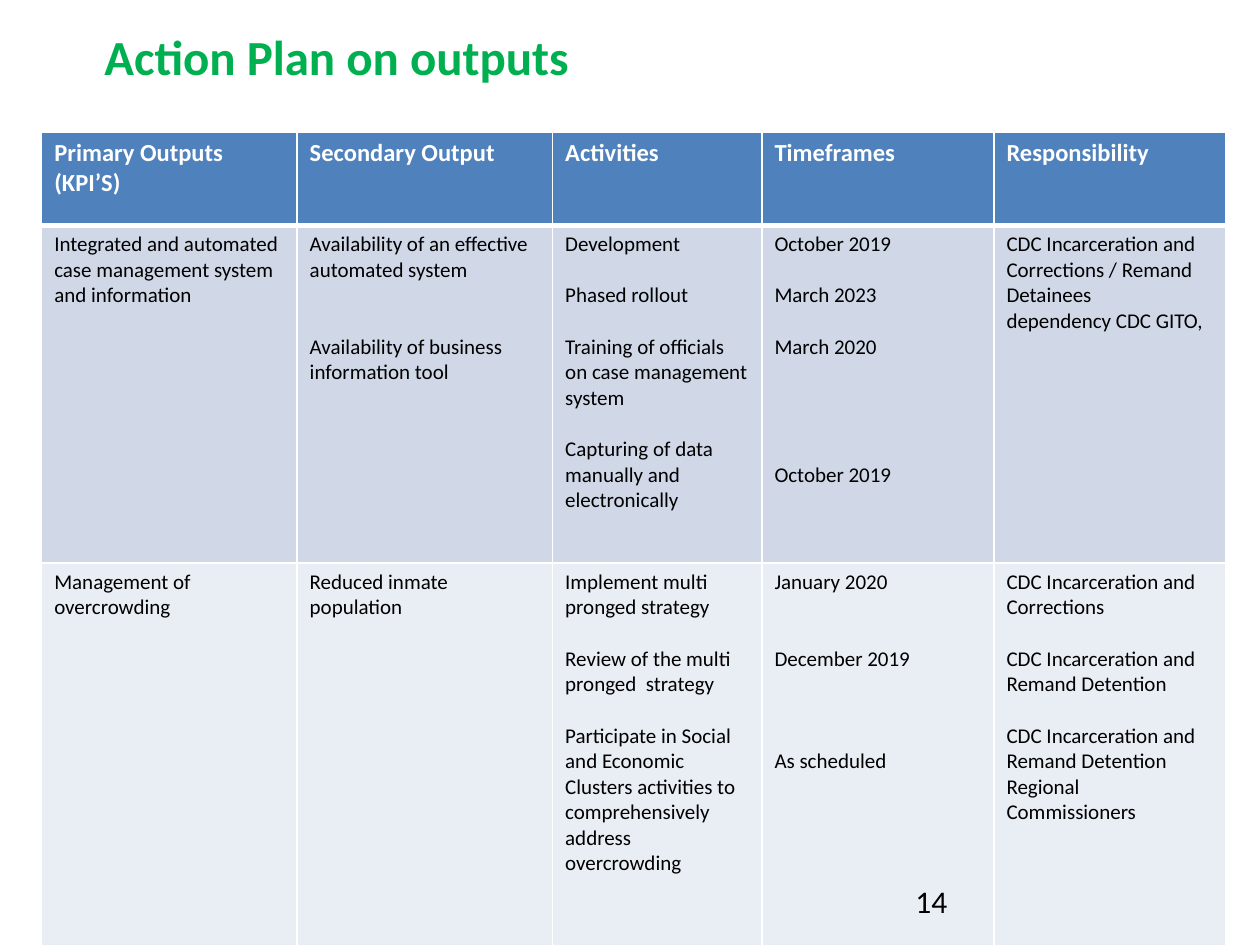
from lxml import etree
from pptx import Presentation
from pptx.dml.color import RGBColor
from pptx.enum.text import MSO_ANCHOR
from pptx.oxml.ns import qn
from pptx.util import Pt

MIDDLE = MSO_ANCHOR.MIDDLE

# Content: each body cell lists (blank lines before, text)
TITLE = "Action Plan on outputs"
PAGE_NUMBER = "14"
HEADERS = ["Primary Outputs (KPI’S)", "Secondary Output", "Activities",
           "Timeframes", "Responsibility"]
OUTPUTS = [
    [
        [(0, "Integrated and automated case management system and information")],
        [(0, "Availability of an effective automated system"),
         (2, "Availability of business information tool")],
        [(0, "Development"),
         (1, "Phased rollout"),
         (1, "Training of officials on case management system"),
         (1, "Capturing of data manually and electronically")],
        [(0, "October 2019"), (1, "March 2023"), (1, "March 2020"),
         (4, "October 2019")],
        [(0, "CDC Incarceration and Corrections / Remand Detainees"),
         (0, "dependency CDC GITO,")],
    ],
    [
        [(0, "Management of overcrowding")],
        [(0, "Reduced inmate population")],
        [(0, "Implement multi pronged strategy"),
         (1, "Review of the multi pronged  strategy"),
         (1, "Participate in Social and Economic Clusters activities to "
             "comprehensively address overcrowding")],
        [(0, "January 2020"), (2, "December 2019"), (3, "As scheduled")],
        [(0, "CDC Incarceration and Corrections"),
         (1, "CDC Incarceration and Remand Detention"),
         (1, "CDC Incarceration and Remand Detention"),
         (0, "Regional Commissioners")],
    ],
]

THEME = {
    "font": "Calibri",
    "title": "00B050", "text": "000000", "header_text": "FFFFFF",
    "header_fill": "4F81BD", "row_fills": ["D0D8E8", "E9EDF4"], "border": "FFFFFF",
    "title_size": 28, "number_size": 18, "header_size": 14, "body_size": 12,
}
BODY_LINE = 14.65
COLUMN_WIDTHS = [146, 146, 119.6, 132.6, 132.6]
ROW_HEIGHTS = [53.2, 193, 223.8]
TABLE_LEFT, TABLE_TOP = 23.8, 75.6
THIN, THICK = 1, 3


def add_run(paragraph, text, size, color, bold=False):
    run = paragraph.add_run()
    run.text = text
    run.font.name = THEME["font"]
    run.font.size = Pt(size)
    run.font.bold = bold
    run.font.color.rgb = RGBColor.from_string(color)


def add_text(slide, box, text, size, color, bold=False):
    frame = slide.shapes.add_textbox(*map(Pt, box)).text_frame
    frame.word_wrap = True
    frame.vertical_anchor = MIDDLE
    add_run(frame.paragraphs[0], text, size, color, bold)


def style_cell(cell, fill, top, bottom):
    cell.fill.solid()
    cell.fill.fore_color.rgb = RGBColor.from_string(fill)
    properties = cell._tc.get_or_add_tcPr()
    sides = [("lnL", THIN), ("lnR", THIN), ("lnT", top), ("lnB", bottom)]
    # Borders must precede the fill
    for index, (tag, width) in enumerate(sides):
        line = etree.Element(qn("a:" + tag), w=str(Pt(width)))
        solid = etree.SubElement(line, qn("a:solidFill"))
        etree.SubElement(solid, qn("a:srgbClr"), val=THEME["border"])
        properties.insert(index, line)


def add_plan_table(slide):
    table = slide.shapes.add_table(
        len(ROW_HEIGHTS), len(COLUMN_WIDTHS), Pt(TABLE_LEFT), Pt(TABLE_TOP),
        Pt(sum(COLUMN_WIDTHS)), Pt(sum(ROW_HEIGHTS))).table
    for column, width in zip(table.columns, COLUMN_WIDTHS):
        column.width = Pt(width)
    for row, height in zip(table.rows, ROW_HEIGHTS):
        row.height = Pt(height)

    # Header row
    for cell, header in zip(table.rows[0].cells, HEADERS):
        style_cell(cell, THEME["header_fill"], THIN, THICK)
        add_run(cell.text_frame.paragraphs[0], header,
                THEME["header_size"], THEME["header_text"], True)

    # Output rows
    for row_index, output in enumerate(OUTPUTS, start=1):
        top = THICK if row_index == 1 else THIN
        for cell, entries in zip(table.rows[row_index].cells, output):
            style_cell(cell, THEME["row_fills"][row_index - 1], top, THIN)
            frame = cell.text_frame
            for index, (gap, text) in enumerate(entries):
                paragraph = frame.add_paragraph() if index else frame.paragraphs[0]
                if gap:
                    paragraph.space_before = Pt(gap * BODY_LINE)
                add_run(paragraph, text, THEME["body_size"], THEME["text"])


def main():
    presentation = Presentation()
    presentation.slide_width, presentation.slide_height = Pt(720), Pt(540)
    slide = presentation.slides.add_slide(presentation.slide_layouts[6])
    add_plan_table(slide)
    add_text(slide, (516, 500.4, 168, 28.8), PAGE_NUMBER,
             THEME["number_size"], THEME["text"])
    add_text(slide, (52.6, 11.5, 648, 41), TITLE,
             THEME["title_size"], THEME["title"], True)
    presentation.save("out.pptx")


if __name__ == "__main__":
    main()
